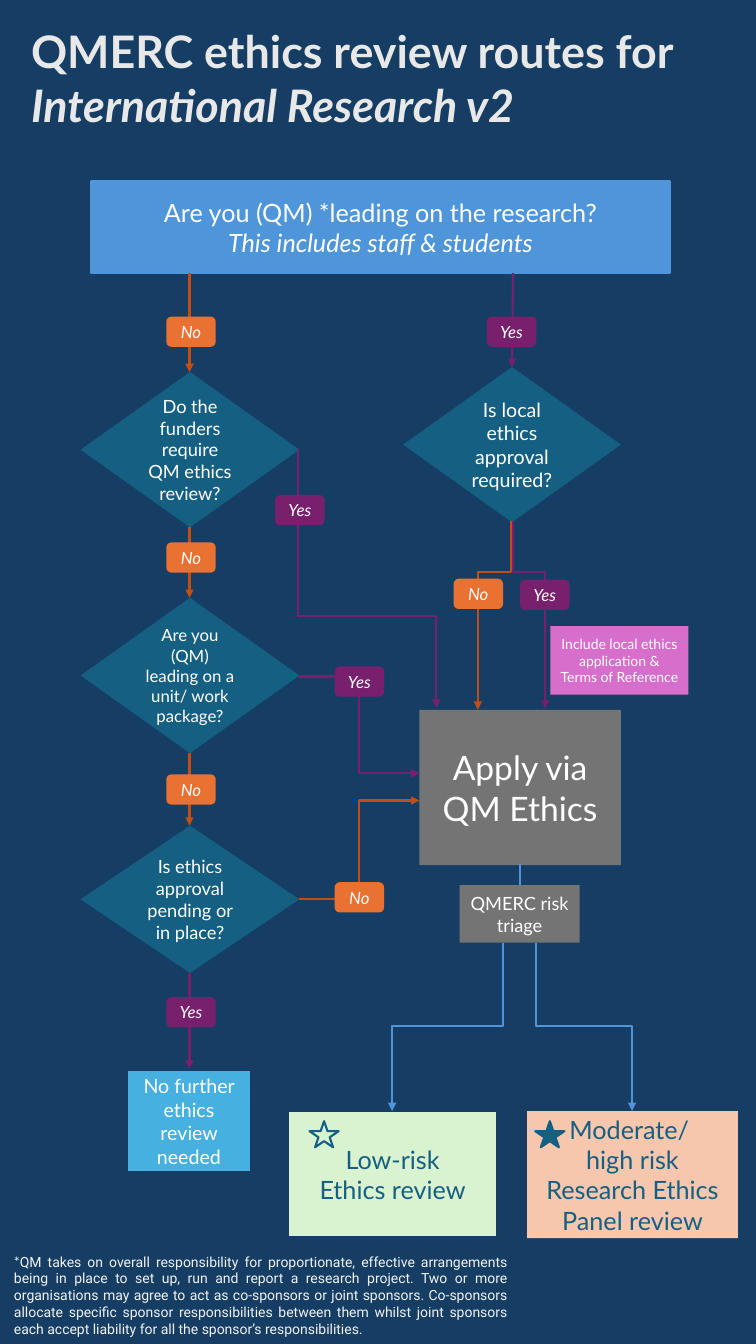
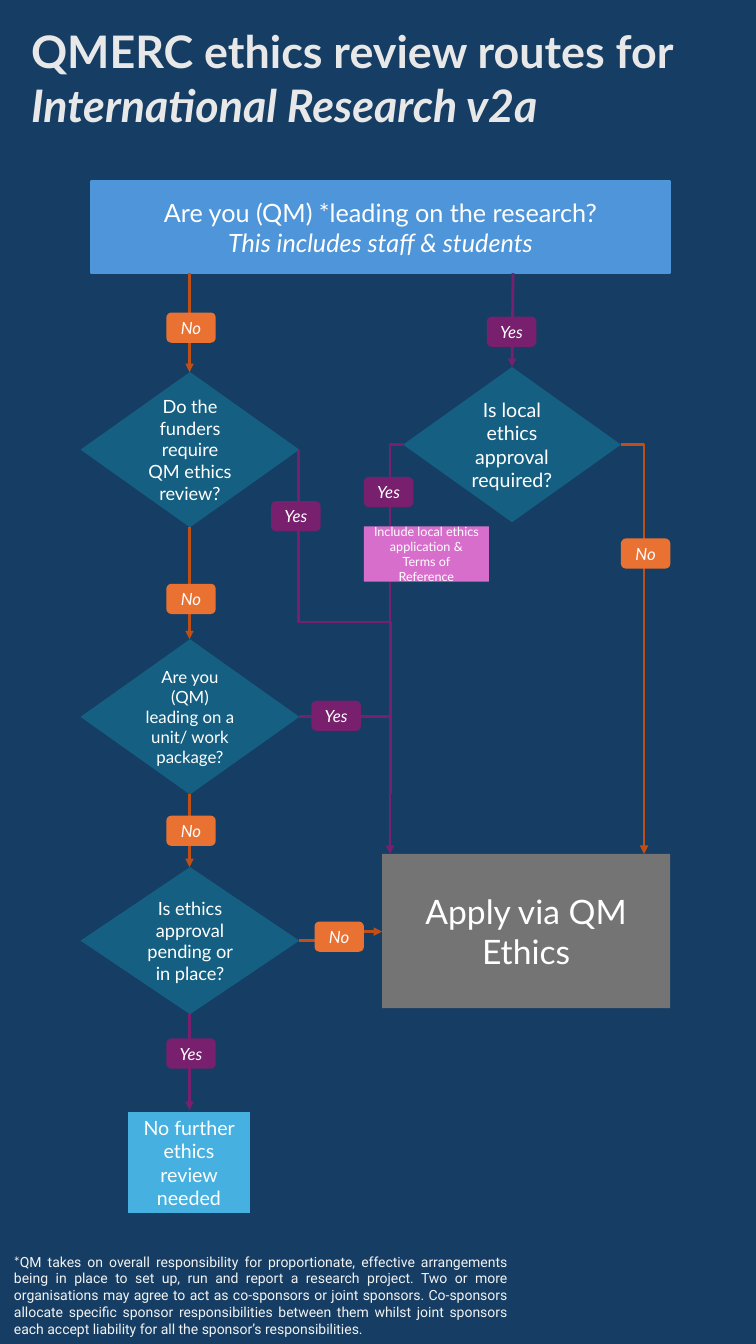
from lxml.etree import SubElement
from pptx import Presentation
from pptx.dml.color import RGBColor
from pptx.enum.shapes import MSO_CONNECTOR as CONNECTOR, MSO_SHAPE as SHAPE
from pptx.enum.text import MSO_ANCHOR as ANCHOR, MSO_AUTO_SIZE as AUTO_SIZE, PP_ALIGN as ALIGN
from pptx.oxml.ns import qn
from pptx.util import Inches, Pt

NAVY = RGBColor(0x16, 0x3E, 0x64)
BLUE = RGBColor(0x4E, 0x95, 0xD9)
SKY = RGBColor(0x46, 0xB1, 0xE1)
TEAL = RGBColor(0x15, 0x60, 0x82)
ORANGE = RGBColor(0xE9, 0x71, 0x32)
RUST = RGBColor(0xC0, 0x4F, 0x15)
PURPLE = RGBColor(0x78, 0x20, 0x6E)
PINK = RGBColor(0xD8, 0x6E, 0xCC)
GREY = RGBColor(0x74, 0x74, 0x74)
GREEN = RGBColor(0xD9, 0xF2, 0xD0)
PEACH = RGBColor(0xF6, 0xC6, 0xAD)
WHITE = RGBColor(0xFF, 0xFF, 0xFF)
TITLE_GREY = RGBColor(0xE8, 0xE8, 0xE8)
NOTE_GREY = RGBColor(0xF2, 0xF2, 0xF2)

FONT = "Lato"
ITALIC = {"italic": True}
ANSWER_FILL = {"No": ORANGE, "Yes": PURPLE}
ANSWER_LINE = {"No": RUST, "Yes": PURPLE}
FOOTNOTE = (
    "QM takes on overall responsibility for proportionate, effective arrangements being in place "
    "to set up, run and report a research project. Two or more organisations may agree to act as "
    "co-sponsors or joint sponsors. Co-sponsors allocate specific sponsor responsibilities between "
    "them whilst joint sponsors each accept liability for all the sponsor’s responsibilities."
)
LOCAL_NOTE = "Include local ethics application & Terms of Reference"


def write(shape, paragraphs, size, colour, align=ALIGN.CENTER, **base):
    """Fill a shape with paragraphs, each a list of (text, format) runs."""
    frame = shape.text_frame
    frame.word_wrap = True
    for index, runs in enumerate(paragraphs):
        paragraph = frame.paragraphs[0] if index == 0 else frame.add_paragraph()
        paragraph.alignment = align
        for text, extra in runs:
            run = paragraph.add_run()
            run.text = text
            run.font.color.rgb = colour
            for name, value in {"name": FONT, "size": Pt(size), **base, **extra}.items():
                setattr(run.font, name, value)


def add_text(slide, box, runs, size, colour, align, **base):
    shape = slide.shapes.add_textbox(*map(Inches, box))
    write(shape, [runs], size, colour, align, **base)
    shape.text_frame.auto_size = AUTO_SIZE.SHAPE_TO_FIT_TEXT


def add_box(slide, box, fill, lines=(), size=12, colour=WHITE, kind=SHAPE.RECTANGLE,
            line=None, line_width=1.5, italic_from=None):
    """Draw a filled shape; lines from italic_from onwards are italic."""
    shape = slide.shapes.add_shape(kind, *map(Inches, box))
    shape.shadow.inherit = False
    if fill is None:
        shape.fill.background()
    else:
        shape.fill.solid()
        shape.fill.fore_color.rgb = fill
    if line is None:
        shape.line.fill.background()
    else:
        shape.line.color.rgb = line
        shape.line.width = Pt(line_width)
    shape.text_frame.vertical_anchor = ANCHOR.MIDDLE
    paragraphs = [
        [(text, ITALIC if italic_from is not None and index >= italic_from else {})]
        for index, text in enumerate(lines)
    ]
    write(shape, paragraphs, size, colour)


def add_diamond(slide, box, question, size):
    add_box(slide, box, TEAL, [question], size, kind=SHAPE.FLOWCHART_DECISION)


def add_answer(slide, answer, left, top):
    add_box(slide, (left, top, 0.49, 0.3), ANSWER_FILL[answer], [answer],
            kind=SHAPE.FLOWCHART_ALTERNATE_PROCESS, italic_from=0)


def add_line(slide, start, end, colour, width, arrow=True, kind=CONNECTOR.STRAIGHT):
    connector = slide.shapes.add_connector(kind, *map(Inches, (*start, *end)))
    connector.line.color.rgb = colour
    connector.line.width = Pt(width)
    if arrow:
        SubElement(connector.line._get_or_add_ln(), qn("a:tailEnd"), type="triangle")
    properties = connector._element.spPr
    SubElement(properties, qn("a:effectLst"))
    return properties


def add_elbow(slide, start, end, colour, width):
    """Go across, down or up at half way, and across again."""
    add_line(slide, start, end, colour, width, kind=CONNECTOR.ELBOW)


def add_corner(slide, start, end, colour, width):
    """Go across, then down."""
    properties = add_line(slide, start, end, colour, width, kind=CONNECTOR.ELBOW)
    properties.find(qn("a:prstGeom")).set("prst", "bentConnector2")


def add_drop(slide, start, end, bend, colour, width, arrow=True):
    """Go down to the height bend, across, and down again."""
    (x1, y1), (x2, y2) = start, end
    middle_x, middle_y = (x1 + x2) / 2, (y1 + y2) / 2
    half_length = (y2 - y1) / 2 * (1 if x2 > x1 else -1)
    half_width = abs(x2 - x1) / 2
    properties = add_line(
        slide, (middle_x + half_length, middle_y - half_width),
        (middle_x - half_length, middle_y + half_width),
        colour, width, arrow, CONNECTOR.ELBOW)
    turn = 270 if x2 > x1 else 90
    properties.find(qn("a:xfrm")).set("rot", str(turn * 60000))
    guides = properties.find(qn("a:prstGeom")).get_or_add_avLst()
    share = round((bend - y1) / (y2 - y1) * 100000)
    SubElement(guides, qn("a:gd"), name="adj1", fmla=f"val {share}")


def add_frame(slide, version):
    """Title, opening question and footnote."""
    add_text(slide, (0.21, 0.19, 7, 1.18),
             [("QMERC ethics review routes for ", {}),
              (f"International Research {version}", ITALIC)],
             32, TITLE_GREY, ALIGN.LEFT, bold=True)
    add_box(slide, (0.9, 1.8, 5.75, 0.91), BLUE,
            ["Are you (QM) *leading on the research?", "This includes staff & students"],
            18, line=BLUE, italic_from=1)
    add_text(slide, (0.04, 12.38, 5.09, 0.94), [("*", {}), (FOOTNOTE, {"name": "Roboto"})],
             10, NOTE_GREY, ALIGN.JUSTIFY)


def add_partner_column(slide, left, top, shift, first_answer, width):
    """Questions when not leading; all after the first move down by shift."""
    centre = left + 1.08
    questions = [
        ("Do the funders require QM ethics review?", 13, 0, 1.54),
        ("Are you (QM) leading on a unit/ work package?", 12, 2.24 + shift, 1.54),
        ("Is ethics approval pending or in place?", 13, 4.5 + shift, 1.46),
    ]
    for question, size, offset, height in questions:
        add_diamond(slide, (left, top + offset, 2.17, height), question, size)
    final = top + 6.91 + shift
    add_box(slide, (left + 0.45, final, 1.25, 1.04), SKY,
            ["No further ethics", "review needed"], 14, line=NAVY, line_width=3)

    bottoms = [top - 0.98] + [top + offset + height for _, _, offset, height in questions]
    tops = [top + offset for _, _, offset, _ in questions] + [final]
    for answer, start, end, rise in zip(
            ("No", "No", "No", "Yes"), bottoms, tops, (first_answer, 0.55, 0.51, 0.71)):
        add_line(slide, (centre, start), (centre, end), ANSWER_LINE[answer], width)
        add_answer(slide, answer, left + 0.85, end - rise)


def add_lead_question(slide, left, top, width):
    """Question when leading, reached from the opening question."""
    centre = left + 1.08
    add_diamond(slide, (left, top, 2.16, 1.54), "Is local ethics approval required?", 14)
    add_line(slide, (centre + 0.01, top - 0.93), (centre, top), PURPLE, width)
    add_answer(slide, "Yes", left + 0.83, top - 0.5)


def add_apply(slide, box):
    add_box(slide, box, GREY, ["Apply via QM Ethics"], 24)


def add_outcomes(slide, left, top, width):
    """Risk triage below the application, with its two reviews."""
    review = top + 2.24
    add_box(slide, (left, top, 1.19, 0.57), GREY, ["QMERC risk triage"], 13)
    add_box(slide, (left - 1.71, review - 0.01, 2.09, 1.27), GREEN,
            ["Low-risk", "Ethics review"], 18, TEAL, line=NAVY, line_width=3)
    add_box(slide, (left + 0.67, review, 2.09, 1.26), PEACH,
            ["Moderate/ ", "high risk", "Research Ethics Panel review"], 18, TEAL)
    for offset, fill in ((-1.49, None), (0.75, TEAL)):
        add_box(slide, (left + offset, review + 0.1, 0.29, 0.26), fill,
                kind=SHAPE.STAR_5_POINT, line=TEAL)
    add_line(slide, (left + 0.6, top - 0.21), (left + 0.6, top), BLUE, width, arrow=False)
    for start, end in ((0.43, -0.67), (0.76, 1.71)):
        add_drop(slide, (left + start, top + 0.57), (left + end, review), top + 1.4, BLUE, width)


def build_triage_slide(slide):
    width = 1.5
    add_frame(slide, "v2")
    add_partner_column(slide, 0.8, 3.69, 0, 0.55, width)
    add_lead_question(slide, 4, 3.64, width)
    add_apply(slide, (4.16, 7.04, 2, 1.54))
    add_outcomes(slide, 4.56, 8.78, width)
    add_box(slide, (5.46, 6.21, 1.37, 0.68), PINK, [LOCAL_NOTE], 10)
    add_drop(slide, (5.09, 5.17), (5.41, 7.03), 5.67, PURPLE, width)
    add_drop(slide, (5.07, 5.17), (4.74, 7.04), 5.67, RUST, width)
    add_drop(slide, (2.96, 4.45), (4.33, 7.02), 6.11, PURPLE, width)
    add_elbow(slide, (2.96, 6.71), (4.16, 7.67), PURPLE, width)
    add_elbow(slide, (2.97, 8.92), (4.16, 7.94), RUST, width)
    for answer, left, top in (("Yes", 5.16, 5.75), ("No", 4.5, 5.74), ("Yes", 2.73, 4.91),
                              ("Yes", 3.32, 6.61), ("No", 3.32, 8.75)):
        add_answer(slide, answer, left, top)


def build_short_slide(slide):
    width = 2
    add_frame(slide, "v2a")
    add_partner_column(slide, 0.8, 3.69, 0.41, 0.59, width)
    add_lead_question(slide, 4, 3.64, width)
    add_apply(slide, (3.79, 8.47, 2.86, 1.53))
    add_corner(slide, (4, 4.41), (3.87, 8.47), PURPLE, width)
    add_corner(slide, (6.16, 4.41), (6.39, 8.47), RUST, width)
    add_drop(slide, (2.96, 4.46), (3.87, 7.88), 6.17, PURPLE, width, arrow=False)
    add_line(slide, (2.97, 7.11), (3.87, 7.11), PURPLE, width, arrow=False)
    add_elbow(slide, (2.97, 9.33), (3.79, 9.24), RUST, width)
    add_box(slide, (3.61, 5.22, 1.24, 0.55), PINK, [LOCAL_NOTE], 9)
    for answer, left, top in (("No", 6.16, 5.34), ("Yes", 3.61, 4.73), ("Yes", 2.69, 4.97),
                              ("Yes", 3.09, 6.95), ("No", 3.12, 9.14)):
        add_answer(slide, answer, left, top)


def main():
    presentation = Presentation()
    presentation.slide_width = Inches(7.5)
    presentation.slide_height = Inches(13.33)
    background = presentation.slide_master.background.fill
    background.solid()
    background.fore_color.rgb = NAVY
    for build in (build_triage_slide, build_short_slide):
        build(presentation.slides.add_slide(presentation.slide_layouts[6]))
    presentation.save("out.pptx")


if __name__ == "__main__":
    main()
